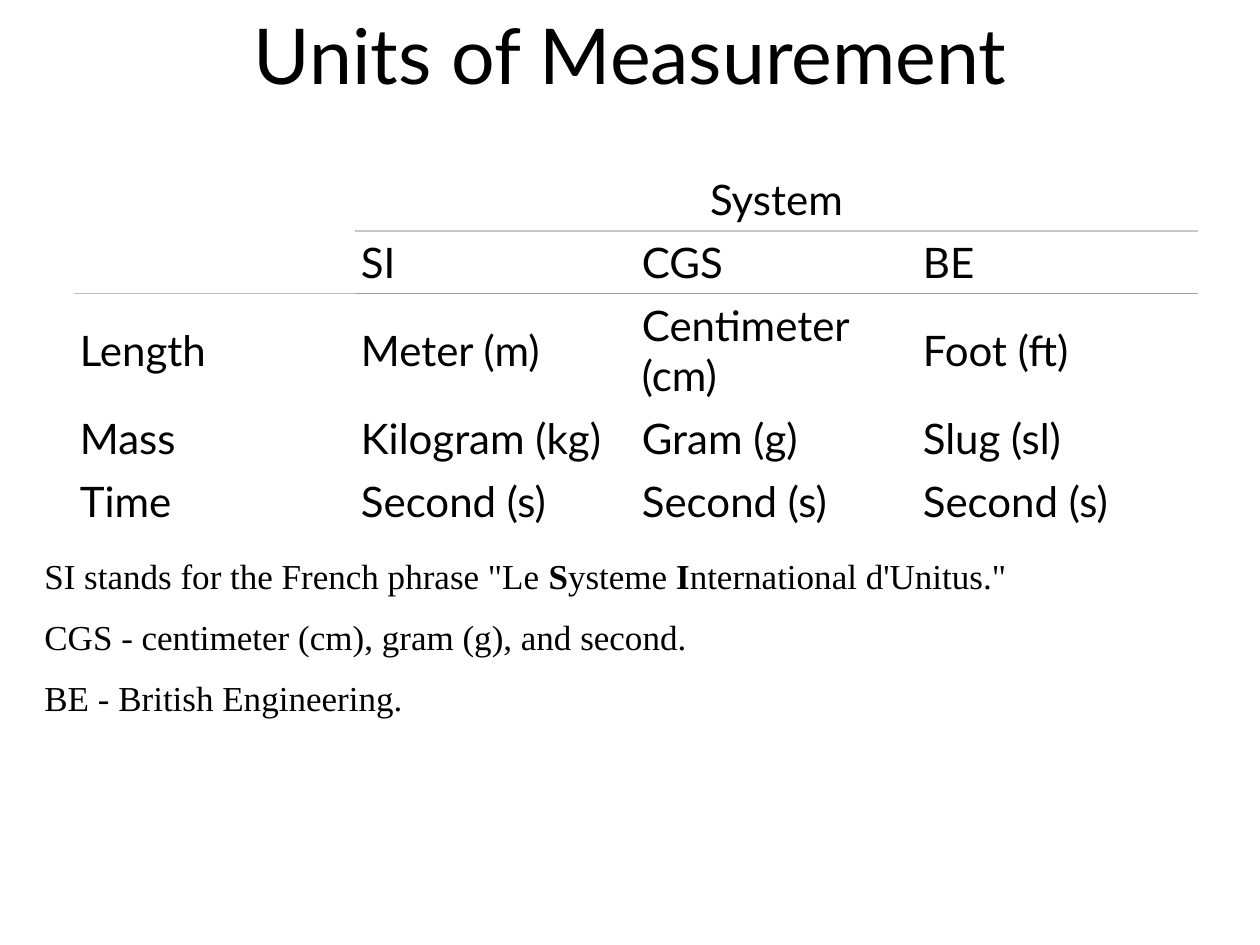
"""Build the Units of Measurement slide."""
from lxml import etree
from pptx import Presentation
from pptx.dml.color import RGBColor
from pptx.enum.text import MSO_ANCHOR, PP_ALIGN
from pptx.oxml.ns import qn
from pptx.util import Pt

PX = 914400 // 126
LEFT, CENTER = PP_ALIGN.LEFT, PP_ALIGN.CENTER
TOP, MIDDLE = MSO_ANCHOR.TOP, MSO_ANCHOR.MIDDLE
BLACK = "000000"

TITLE = "Units of Measurement"
UNITS = [
    ["", "System", "", ""],
    ["", "SI", "CGS", "BE"],
    ["Length", "Meter (m)", "Centimeter (cm)", "Foot (ft)"],
    ["Mass", "Kilogram (kg)", "Gram (g)", "Slug (sl)"],
    ["Time", "Second (s)", "Second (s)", "Second (s)"],
]
RULES_BELOW = {
    0: [None, "C8C8C8", "C8C8C8", "C8C8C8"],
    1: ["C0C0C0", "A0A0A0", "A0A0A0", "A0A0A0"],
}
NOTES = [
    [("SI stands for the French phrase \"Le ", False), ("S", True),
     ("ysteme ", False), ("I", True), ("nternational d'Unitus.\"", False)],
    [("CGS - centimeter (cm), gram (g), and second.", False)],
    [("BE - British Engineering.", False)],
]
TITLE_BOX = (95, 8, 1071, 92)
NOTES_BOX = (32, 548, 1228, 183)
TABLE_LEFT, TABLE_TOP, COLUMN, ROW, INSET = 74, 168, 281, 63, 6


def color(hex_value):
    return RGBColor.from_string(hex_value)


def write(frame, paragraphs, size, font="Lato", align=LEFT, gap=0):
    """Fill a text frame with paragraphs made of (text, bold) runs."""
    frame.word_wrap = True
    for index, runs in enumerate(paragraphs):
        paragraph = frame.add_paragraph() if index else frame.paragraphs[0]
        paragraph.alignment = align
        if index and gap:
            paragraph.space_before = Pt(gap)
        for text, bold in runs:
            run = paragraph.add_run()
            run.text = text
            run.font.size, run.font.name, run.font.bold = Pt(size), font, bold
            run.font.color.rgb = color(BLACK)


def add_text(slide, box, paragraphs, anchor=TOP, **text_format):
    frame = slide.shapes.add_textbox(*(n * PX for n in box)).text_frame
    frame.vertical_anchor = anchor
    write(frame, paragraphs, **text_format)


def set_border(cell, side, hex_value):
    properties = cell._tc.get_or_add_tcPr()
    border = etree.SubElement(properties, qn(f"a:ln{side}"), w=str(Pt(0.75)))
    if hex_value:
        fill = etree.SubElement(border, qn("a:solidFill"))
        etree.SubElement(fill, qn("a:srgbClr"), val=hex_value)
    else:
        etree.SubElement(border, qn("a:noFill"))


def add_units_table(slide):
    rows, columns = len(UNITS), len(UNITS[0])
    table = slide.shapes.add_table(
        rows, columns, TABLE_LEFT * PX, TABLE_TOP * PX,
        columns * COLUMN * PX, rows * ROW * PX).table
    table.first_row = table.horz_banding = False
    table.cell(0, 1).merge(table.cell(0, columns - 1))
    no_rules = [None] * columns
    for r, labels in enumerate(UNITS):
        for c, label in enumerate(labels):
            cell = table.cell(r, c)
            borders = {"L": None, "R": None,
                       "T": RULES_BELOW.get(r - 1, no_rules)[c],
                       "B": RULES_BELOW.get(r, no_rules)[c]}
            for side, hex_value in borders.items():
                set_border(cell, side, hex_value)
            cell.fill.background()
            cell.vertical_anchor = MIDDLE
            cell.margin_left = cell.margin_right = INSET * PX
            cell.margin_top = cell.margin_bottom = INSET * PX
            if label:
                write(cell.text_frame, [[(label, False)]], size=24,
                      align=LEFT if r else CENTER)


def main():
    deck = Presentation()
    deck.slide_width, deck.slide_height = 1260 * PX, 945 * PX
    slide = deck.slides.add_slide(deck.slide_layouts[6])
    add_text(slide, TITLE_BOX, [[(TITLE, False)]], anchor=MIDDLE,
             size=44, align=CENTER)
    add_units_table(slide)
    add_text(slide, NOTES_BOX, NOTES, size=20, font="Times New Roman", gap=11)
    deck.save("out.pptx")


if __name__ == "__main__":
    main()
